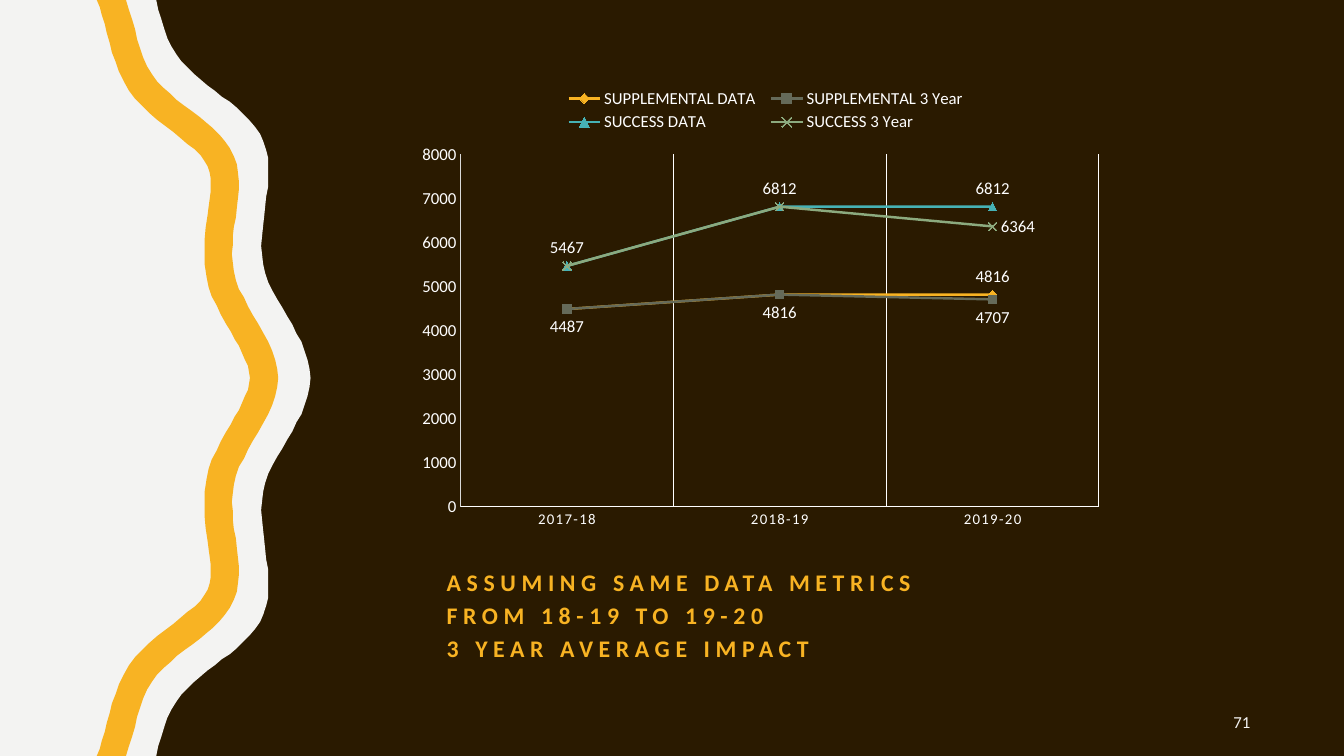
from lxml import etree
from pptx import Presentation
from pptx import util as u
from pptx.chart.data import CategoryChartData
from pptx.dml.color import RGBColor
from pptx.enum import chart as ch, text
from pptx.oxml.ns import qn

PX = 9144  # EMU in one px, 100 px to the inch
WIDTH, HEIGHT = 1333, 750
FONT = "Calibri"
COLORS = {
    "ground": "2A1A00", "paper": "F3F3F2", "gold": "F8B323", "olive": "656A59",
    "teal": "46B2B5", "sage": "8CAA7E", "white": "FFFFFF", "grey": "D9D9D9",
}

# Upper halves of the wavy edges, from the top of the slide to its middle
PAPER_EDGE = [
    (155, 0), (157, 10), (160, 19), (163, 29), (166, 38), (170, 46), (175, 54), (180, 61),
    (186, 67), (192, 73), (199, 79), (206, 85), (213, 90), (220, 96), (228, 101), (235, 107),
    (241, 113), (247, 119), (253, 126), (258, 133), (261, 140), (264, 149), (266, 157),
    (266, 167), (266, 176), (266, 185), (264, 195), (263, 205), (262, 215), (261, 224),
    (260, 234), (259, 244), (260, 253), (261, 262), (263, 271), (266, 280), (270, 288),
    (275, 297), (280, 305), (285, 314), (290, 322), (294, 331), (299, 339), (302, 348),
    (305, 357), (307, 366), (308, 375),
]
RIBBON_RIGHT = [
    (125, 0), (128, 10), (131, 19), (134, 29), (136, 39), (139, 48), (142, 57), (146, 66),
    (151, 74), (156, 81), (162, 87), (169, 93), (175, 99), (183, 105), (190, 110), (198, 116),
    (205, 122), (211, 127), (218, 134), (223, 140), (228, 147), (232, 155), (235, 163),
    (236, 171), (237, 180), (237, 188), (236, 197), (235, 206), (234, 216), (232, 225),
    (231, 234), (231, 243), (230, 252), (231, 261), (232, 269), (234, 278), (237, 287),
    (242, 295), (246, 304), (251, 313), (256, 321), (261, 330), (266, 339), (270, 348),
    (273, 357), (275, 366), (276, 375),
]
RIBBON_LEFT = [
    (96, 0), (99, 7), (101, 15), (104, 24), (106, 33), (109, 43), (111, 52), (115, 62),
    (118, 71), (123, 81), (128, 90), (134, 98), (141, 105), (148, 112), (156, 119), (164, 125),
    (172, 131), (179, 137), (186, 143), (193, 148), (199, 154), (203, 160), (206, 165),
    (208, 171), (209, 177), (209, 183), (209, 190), (208, 198), (207, 205), (206, 213),
    (204, 226), (203, 238), (203, 250), (203, 262), (205, 275), (207, 285), (210, 294),
    (215, 303), (219, 312), (224, 321), (229, 329), (233, 337), (237, 343), (240, 350),
    (243, 357), (246, 363), (247, 369), (248, 375),
]

CATEGORIES = ["2017-18", "2018-19", "2019-20"]
ABOVE, BELOW, RIGHT = (
    ch.XL_LABEL_POSITION.ABOVE, ch.XL_LABEL_POSITION.BELOW, ch.XL_LABEL_POSITION.RIGHT)
MARKER = ch.XL_MARKER_STYLE
# name, values, colour, marker, label position by point
SERIES = [
    ("SUPPLEMENTAL DATA", (4487, 4816, 4816), "gold", MARKER.DIAMOND,
     {0: BELOW, 1: BELOW, 2: ABOVE}),
    ("SUPPLEMENTAL 3 Year", (4487, 4816, 4707), "olive", MARKER.SQUARE, {2: BELOW}),
    ("SUCCESS DATA", (5467, 6812, 6812), "teal", MARKER.TRIANGLE,
     {0: ABOVE, 1: ABOVE, 2: ABOVE}),
    ("SUCCESS 3 Year", (5467, 6812, 6364), "sage", MARKER.X, {2: RIGHT}),
]


def rgb(name):
    return RGBColor.from_string(COLORS[name])


def emu(box):
    return [u.Emu(length * PX) for length in box]


def style_font(font, size, color, bold=False):
    font.name, font.size, font.bold = FONT, u.Pt(size), bold
    font.color.rgb = rgb(color)


def style_line(line, color, width):
    line.color.rgb = rgb(color)
    line.width = u.Pt(width)


def mirrored(half):
    """Continue an upper half edge down to the bottom of the slide."""
    return half + [(x, HEIGHT - y) for x, y in reversed(half[:-1])]


def add_outline(slide, points, color):
    builder = slide.shapes.build_freeform(*points[0], scale=PX)
    builder.add_line_segments(points[1:], close=True)
    outline = builder.convert_to_shape()
    outline.shadow.inherit = False
    outline.fill.solid()
    outline.fill.fore_color.rgb = rgb(color)
    outline.line.fill.background()


def add_wavy_border(slide):
    add_outline(slide, [(0, 0), *mirrored(PAPER_EDGE), (0, HEIGHT)], "paper")
    add_outline(slide, mirrored(RIBBON_RIGHT) + mirrored(RIBBON_LEFT)[::-1], "gold")


def set_layout(parent, index, box, fractions, inner=False):
    """Fix a chart part at fractions (x, y, w, h) of its chart."""
    for old in parent.findall(qn("c:layout")):
        parent.remove(old)
    layout = etree.Element(qn("c:layout"))
    manual = etree.SubElement(layout, qn("c:manualLayout"))
    settings = [("layoutTarget", "inner")] if inner else []
    settings += [("xMode", "edge"), ("yMode", "edge"), *zip("xywh", fractions)]
    for tag, value in settings:
        etree.SubElement(manual, qn("c:" + tag)).set("val", str(value))
    parent.insert(index, layout)


def style_series(series, color, marker, label_positions):
    series.smooth = False
    style_line(series.format.line, color, 1.75)
    series.marker.style, series.marker.size = marker, 6
    style_line(series.marker.format.line, color, 0.75)
    if marker == MARKER.X:
        series.marker.format.fill.background()
    else:
        series.marker.format.fill.solid()
        series.marker.format.fill.fore_color.rgb = rgb(color)
    series.data_labels.show_value = False
    for point, position in label_positions.items():
        label = series.points[point].data_label
        style_font(label.font, 12, "white")
        label.position = position


def add_funding_chart(slide, box):
    data = CategoryChartData(number_format="General")
    data.categories = CATEGORIES
    for name, values, *_ in SERIES:
        data.add_series(name, values)
    chart = slide.shapes.add_chart(ch.XL_CHART_TYPE.LINE_MARKERS, *emu(box), data).chart
    style_font(chart.font, 10, "white")
    chart.has_title = False
    chart.plots[0].vary_by_categories = False
    for series, (_, _, color, marker, positions) in zip(chart.plots[0].series, SERIES):
        style_series(series, color, marker, positions)

    years, amounts = chart.category_axis, chart.value_axis
    for axis, size, color in ((years, 10.6, "white"), (amounts, 12, "grey")):
        axis.major_tick_mark = axis.minor_tick_mark = ch.XL_TICK_MARK.NONE
        style_font(axis.tick_labels.font, size, "white")
        style_line(axis.format.line, color, 0.75)
    years.tick_labels.font._rPr.set("spc", "100")
    years.has_major_gridlines = True
    style_line(years.major_gridlines.format.line, "white", 0.75)
    amounts.has_major_gridlines = False
    amounts.minimum_scale, amounts.maximum_scale, amounts.major_unit = 0, 8000, 1000

    chart.has_legend = True
    legend = chart.legend
    legend.position = ch.XL_LEGEND_POSITION.TOP
    legend.include_in_layout = False
    style_font(legend.font, 12, "white")
    set_layout(legend._element, 1, box, (0.21, 0.02, 0.59, 0.11))
    plot_area = chart._chartSpace.find(".//" + qn("c:plotArea"))
    set_layout(plot_area, 0, box, (0.07, 0.17, 0.91, 0.76), inner=True)


def add_assumption(slide, box):
    body = slide.placeholders[1]
    body.left, body.top, body.width, body.height = emu(box)
    frame = body.text_frame
    frame.auto_size = text.MSO_AUTO_SIZE.NONE
    frame.vertical_anchor = text.MSO_ANCHOR.TOP
    frame.text = "ASSUMING SAME DATA METRICS\nFROM 18-19 TO 19-20\n3 YEAR AVERAGE IMPACT"
    for index, paragraph in enumerate(frame.paragraphs):
        properties = paragraph._p.get_or_add_pPr()
        properties.set("marL", "0")
        properties.set("indent", "0")
        paragraph.line_spacing = 0.8
        paragraph.space_before = u.Pt(7 if index else 0)
        etree.SubElement(properties, qn("a:buNone"))
        style_font(paragraph.font, 17, "gold", bold=True)
        paragraph.font._rPr.set("spc", "400")


def add_page_number(slide, box):
    frame = slide.shapes.add_textbox(*emu(box)).text_frame
    frame.word_wrap = True
    frame.vertical_anchor = text.MSO_ANCHOR.MIDDLE
    number = frame.paragraphs[0]
    number.text = "71"
    number.alignment = text.PP_ALIGN.RIGHT
    style_font(number.font, 12, "paper")


def main():
    prs = Presentation()
    prs.slide_width, prs.slide_height = emu((WIDTH, HEIGHT))
    slide = prs.slides.add_slide(prs.slide_layouts[1])
    slide.background.fill.solid()
    slide.background.fill.fore_color.rgb = rgb("ground")
    title = slide.shapes.title._element
    title.getparent().remove(title)
    add_wavy_border(slide)
    add_assumption(slide, (433, 564, 684, 104))
    add_page_number(slide, (1087, 697, 163, 38))
    add_funding_chart(slide, (408, 75, 696, 460))
    prs.save("out.pptx")


if __name__ == "__main__":
    main()
